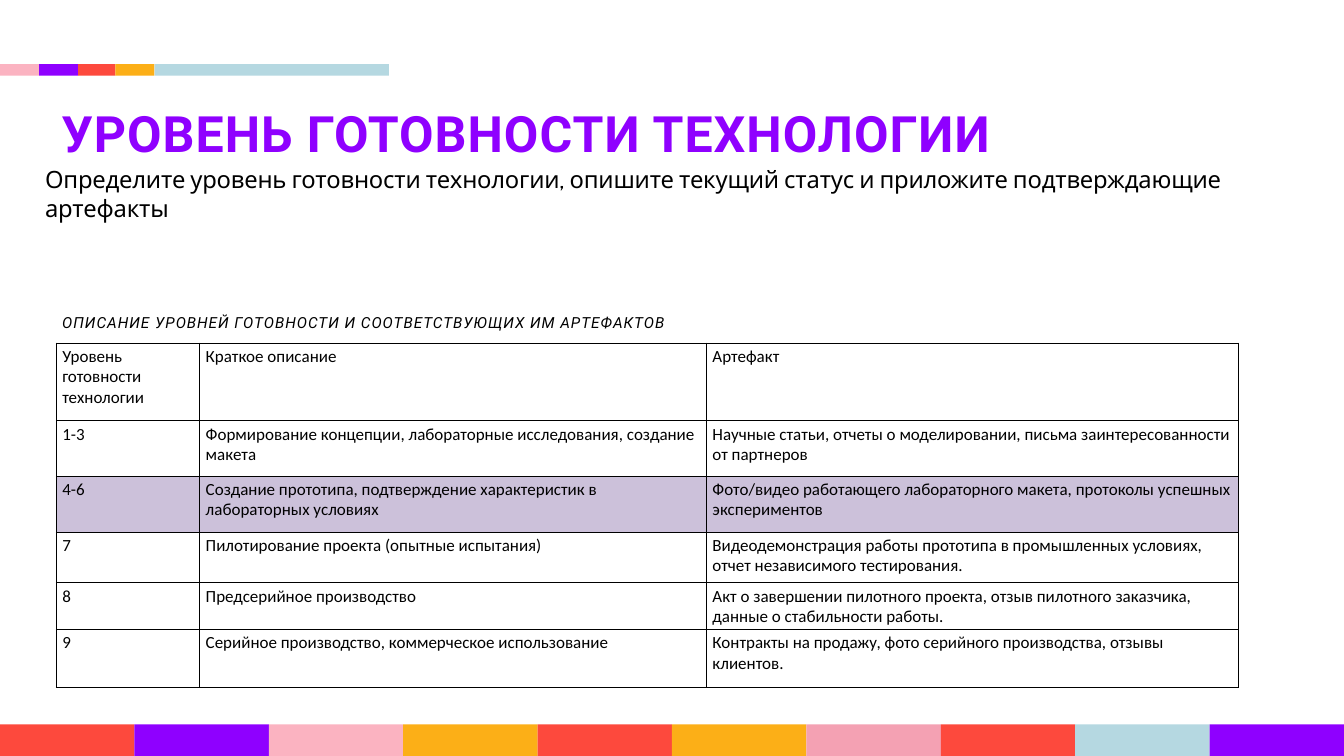
from pptx import Presentation
from pptx.dml.color import RGBColor
from pptx.enum.shapes import MSO_SHAPE
from pptx.enum.text import MSO_AUTO_SIZE
from pptx.oxml import parse_xml
from pptx.oxml.ns import nsdecls
from pptx.util import Pt

RECTANGLE = MSO_SHAPE.RECTANGLE
GROW = MSO_AUTO_SIZE.SHAPE_TO_FIT_TEXT

BLACK = RGBColor(0x00, 0x00, 0x00)
VIOLET = RGBColor(0x8F, 0x00, 0xFF)
RED = RGBColor(0xFD, 0x49, 0x3D)
AMBER = RGBColor(0xFC, 0xAF, 0x17)
PINK = RGBColor(0xFB, 0xB3, 0xC1)
ROSE = RGBColor(0xF4, 0xA1, 0xB3)
SKY = RGBColor(0xB5, 0xD8, 0xE1)
LILAC = RGBColor(0xCC, 0xC1, 0xDA)

SLIDE_WIDTH, SLIDE_HEIGHT = 1583.3, 890.6

ACCENT_BANDS = [(PINK, 46), (VIOLET, 46), (RED, 44), (AMBER, 46), (SKY, 276)]
FOOTER_COLORS = [RED, VIOLET, PINK, AMBER, RED, AMBER, ROSE, RED, SKY, VIOLET]

COLUMN_WIDTHS = [169, 597, 627.2]
ROW_HEIGHTS = [91.8, 64.8, 66, 60, 54.3, 67.5]
HIGHLIGHTED_ROW = 2
LEVELS = [
    ("Уровень готовности технологии", "Краткое описание", "Артефакт"),
    ("1-3",
     "Формирование концепции, лабораторные исследования, создание макета",
     "Научные статьи, отчеты о моделировании, письма заинтересованности от партнеров"),
    ("4-6",
     "Создание прототипа, подтверждение характеристик в лабораторных условиях",
     "Фото/видео работающего лабораторного макета, протоколы успешных экспериментов"),
    ("7",
     "Пилотирование проекта (опытные испытания)",
     "Видеодемонстрация работы прототипа в промышленных условиях, "
     "отчет независимого тестирования."),
    ("8",
     "Предсерийное производство",
     "Акт о завершении пилотного проекта, отзыв пилотного заказчика, "
     "данные о стабильности работы."),
    ("9",
     "Серийное производство, коммерческое использование",
     "Контракты на продажу, фото серийного производства, отзывы клиентов."),
]


def add_color_strip(slide, left, top, height, bands):
    """Place coloured (color, width) bands side by side."""
    for color, width in bands:
        band = slide.shapes.add_shape(
            RECTANGLE, Pt(left), Pt(top), Pt(width), Pt(height))
        band.shadow.inherit = False
        band.fill.solid()
        band.fill.fore_color.rgb = color
        band.line.fill.background()
        left += width


def add_run(paragraph, text, font_name, size, color=BLACK, spacing=0):
    """Add a run; spacing is the letter spacing in points."""
    run = paragraph.add_run()
    run.text = text
    run.font.name = font_name
    run.font.size = Pt(size)
    run.font.color.rgb = color
    if spacing:
        run.font._element.set("spc", str(round(spacing * 100)))
    return run


def add_text_frame(slide, left, top, width, height):
    frame = slide.shapes.add_textbox(
        Pt(left), Pt(top), Pt(width), Pt(height)).text_frame
    frame.word_wrap = True
    frame.auto_size = GROW
    return frame


def add_title(slide, left, top, width, height):
    frame = add_text_frame(slide, left, top, width, height)
    frame.margin_left = frame.margin_right = frame.margin_bottom = Pt(3)
    frame.margin_top = Pt(2.8)
    title = add_run(frame.paragraphs[0], "УРОВЕНЬ ГОТОВНОСТИ ТЕХНОЛОГИИ",
                    "Roboto", 59, VIOLET, 1.2)
    title.font.bold = True


def add_instruction(slide, left, top, width, height):
    frame = add_text_frame(slide, left, top, width, height)
    add_run(frame.paragraphs[0],
            "Определите уровень готовности технологии, опишите текущий статус "
            "и приложите подтверждающие артефакты", "Cabin", 28, spacing=-0.2)


def add_table_caption(slide, left, top, width, height):
    frame = add_text_frame(slide, left, top, width, height)
    caption = add_run(
        frame.paragraphs[0],
        "ОПИСАНИЕ УРОВНЕЙ ГОТОВНОСТИ И СООТВЕТСТВУЮЩИХ ИМ АРТЕФАКТОВ",
        "Roboto", 18, spacing=1.2)
    caption.font.italic = True


def add_cell_borders(cell):
    properties = cell._tc.get_or_add_tcPr()
    for position, side in enumerate(("lnL", "lnR", "lnT", "lnB")):
        border = parse_xml(
            f'<a:{side} {nsdecls("a")} w="{Pt(1)}"><a:solidFill>'
            f'<a:srgbClr val="{BLACK}"/></a:solidFill></a:{side}>')
        properties.insert(position, border)


def add_levels_table(slide, left, top):
    table = slide.shapes.add_table(
        len(LEVELS), len(COLUMN_WIDTHS), Pt(left), Pt(top),
        Pt(sum(COLUMN_WIDTHS)), Pt(sum(ROW_HEIGHTS))).table
    table.first_row = False
    table.horz_banding = False
    for column, width in zip(table.columns, COLUMN_WIDTHS):
        column.width = Pt(width)
    for row_index, (row, height) in enumerate(zip(table.rows, ROW_HEIGHTS)):
        row.height = Pt(height)
        for cell, text in zip(row.cells, LEVELS[row_index]):
            if row_index == HIGHLIGHTED_ROW:
                cell.fill.solid()
                cell.fill.fore_color.rgb = LILAC
            else:
                cell.fill.background()
            add_cell_borders(cell)
            add_run(cell.text_frame.paragraphs[0], text, "Calibri", 20)


def main():
    deck = Presentation()
    deck.slide_width, deck.slide_height = Pt(SLIDE_WIDTH), Pt(SLIDE_HEIGHT)
    slide = deck.slides.add_slide(deck.slide_layouts[6])

    add_color_strip(slide, 0, 75.6, 13.6, ACCENT_BANDS)
    footer_height = 37.4
    band_width = SLIDE_WIDTH / len(FOOTER_COLORS)
    add_color_strip(slide, 0, SLIDE_HEIGHT - footer_height, footer_height,
                    [(color, band_width) for color in FOOTER_COLORS])
    add_title(slide, 69.2, 118, 1478, 73)
    add_instruction(slide, 46, 190.8, 1524, 41)
    add_levels_table(slide, 66.2, 404)
    add_table_caption(slide, 66.2, 365, 752, 29)

    deck.save("out.pptx")


if __name__ == "__main__":
    main()
